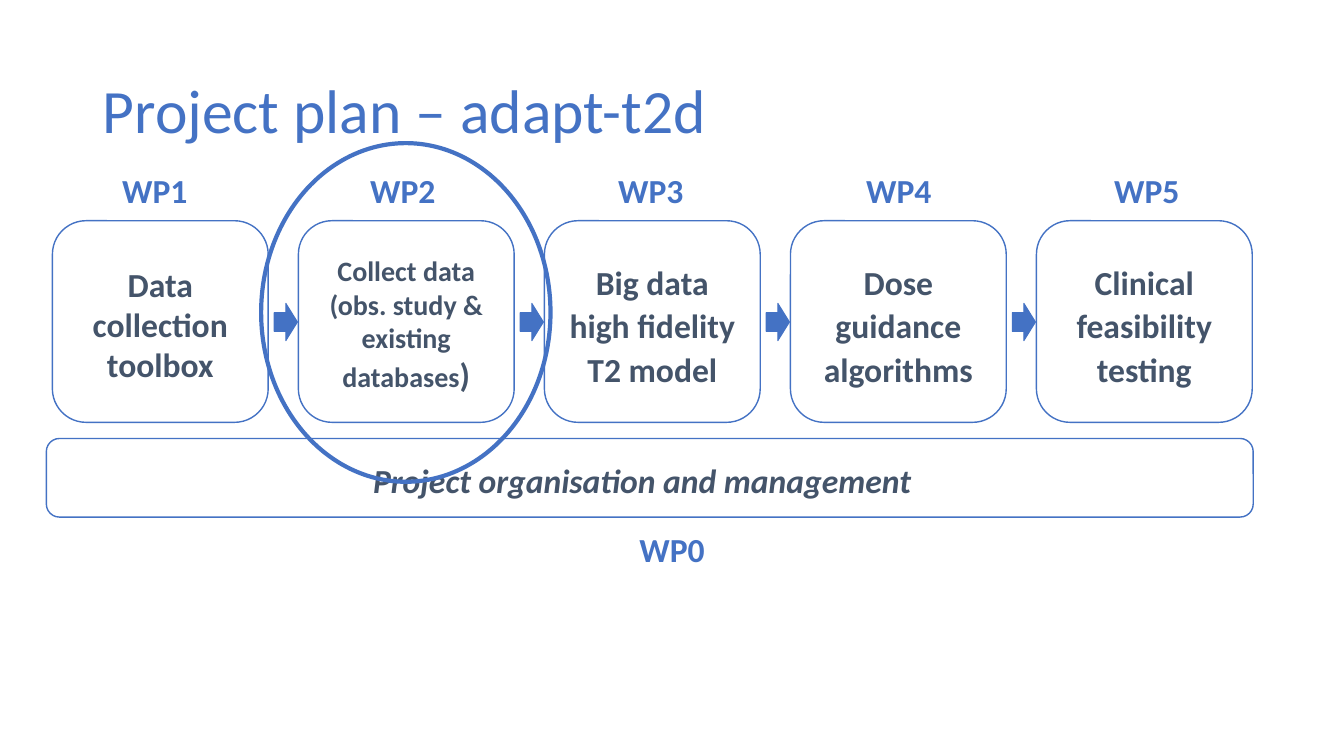
from dataclasses import dataclass
from pptx import Presentation
from pptx.dml.color import RGBColor as Rgb
from pptx.enum.shapes import MSO_SHAPE as Kind
from pptx.enum.text import MSO_ANCHOR as Anchor, MSO_AUTO_SIZE as Fit, PP_ALIGN as Align
from pptx.util import Inches, Pt


@dataclass(frozen=True)
class Theme:
    """Colours, font and type sizes of the slide."""
    blue: Rgb = Rgb(0x44, 0x72, 0xC4)
    ink: Rgb = Rgb(0x44, 0x54, 0x6A)
    white: Rgb = Rgb(0xFF, 0xFF, 0xFF)
    font: str = "Calibri"
    head: int = 44
    text: int = 24
    small: int = 20


LOOK = Theme()
PITCH = 2.44
STEPS = [
    ([[("Data collection toolbox", LOOK.text)]], 1),
    ([[("Collect data", LOOK.small)],
      [("(obs. study & existing databases", LOOK.small), (")", LOOK.text)]], 1),
    ([[("Big data high fidelity T2 model", LOOK.text)]], 1.07),
    ([[("Dose guidance algorithms", LOOK.text)]], 1.07),
    ([[("Clinical feasibility testing", LOOK.text)]], 1.07),
]


def write(para, text, size, color, bold=True, italic=False):
    """Add one styled run to a paragraph."""
    run = para.add_run()
    run.text = text
    font = run.font
    font.name, font.size, font.bold, font.italic = LOOK.font, Pt(size), bold, italic
    font.color.rgb = color


def draw(slide, kind, box, fill=None, width=1):
    """Add a preset shape with a blue outline."""
    shape = slide.shapes.add_shape(kind, *map(Inches, box))
    shape.shadow.inherit = False
    if fill is None:
        shape.fill.background()
    else:
        shape.fill.solid()
        shape.fill.fore_color.rgb = fill
    shape.line.color.rgb = LOOK.blue
    shape.line.width = Pt(width)
    return shape


def panel(slide, box, paras, space=1, italic=False, right=0.1):
    """Draw a rounded white panel with centred paragraphs."""
    shape = draw(slide, Kind.ROUNDED_RECTANGLE, box, LOOK.white)
    frame = shape.text_frame
    frame.word_wrap = True
    frame.vertical_anchor = Anchor.MIDDLE
    frame.margin_top, frame.margin_right = Inches(0.1), Inches(right)
    for i, runs in enumerate(paras):
        para = frame.add_paragraph() if i else frame.paragraphs[0]
        para.alignment, para.line_spacing = Align.CENTER, space
        for text, size in runs:
            write(para, text, size, LOOK.ink, italic=italic)


def label(slide, left, top, text):
    """Add a centred work package label."""
    frame = slide.shapes.add_textbox(*map(Inches, (left, top, 1.43, 0.5))).text_frame
    frame.word_wrap = True
    frame.auto_size = Fit.SHAPE_TO_FIT_TEXT
    para = frame.paragraphs[0]
    para.alignment = Align.CENTER
    write(para, text, LOOK.text, LOOK.blue)


def title(slide, box, text):
    """Place the title placeholder and fill it."""
    shape = slide.shapes.title
    shape.left, shape.top, shape.width, shape.height = map(Inches, box)
    frame = shape.text_frame
    frame.auto_size, frame.vertical_anchor = Fit.NONE, Anchor.MIDDLE
    para = frame.paragraphs[0]
    para.alignment, para.line_spacing = Align.LEFT, 0.9
    write(para, text, LOOK.head, LOOK.blue, bold=False)


def flow(slide, box):
    """Lay out the labelled steps and the arrows between them."""
    left, top, width, height = box
    for i, (paras, space) in enumerate(STEPS):
        x = left + i * PITCH
        panel(slide, (x, top, width, height), paras, space)
        label(slide, left + 0.3 + i * 2.46, top - 0.55, f"WP{i + 1}")
        if i < len(STEPS) - 1:
            arrow = (x + width + 0.06, top + 0.82, 0.23, 0.37)
            draw(slide, Kind.RIGHT_ARROW, arrow, LOOK.blue, 0.75)


def base(slide, box):
    """Draw the management bar with its label below."""
    left, top, width, height = box
    text = "Project organisation and management"
    panel(slide, box, [[(text, LOOK.text)]], italic=True, right=0.25)
    label(slide, left + 5.49, top + height + 0.07, "WP0")


def main():
    """Build and save the slide."""
    deck = Presentation()
    deck.slide_width, deck.slide_height = Inches(13.33), Inches(7.5)
    slide = deck.slides.add_slide(deck.slide_layouts[5])
    title(slide, (0.92, 0.4, 11.5, 1.45), "Project plan – adapt-t2d")
    flow(slide, (0.52, 2.19, 2.14, 2))
    base(slide, (0.46, 4.35, 11.97, 0.78))
    draw(slide, Kind.OVAL, (2.59, 1.42, 2.87, 3.36), width=3)
    deck.save("out.pptx")


if __name__ == "__main__":
    main()
